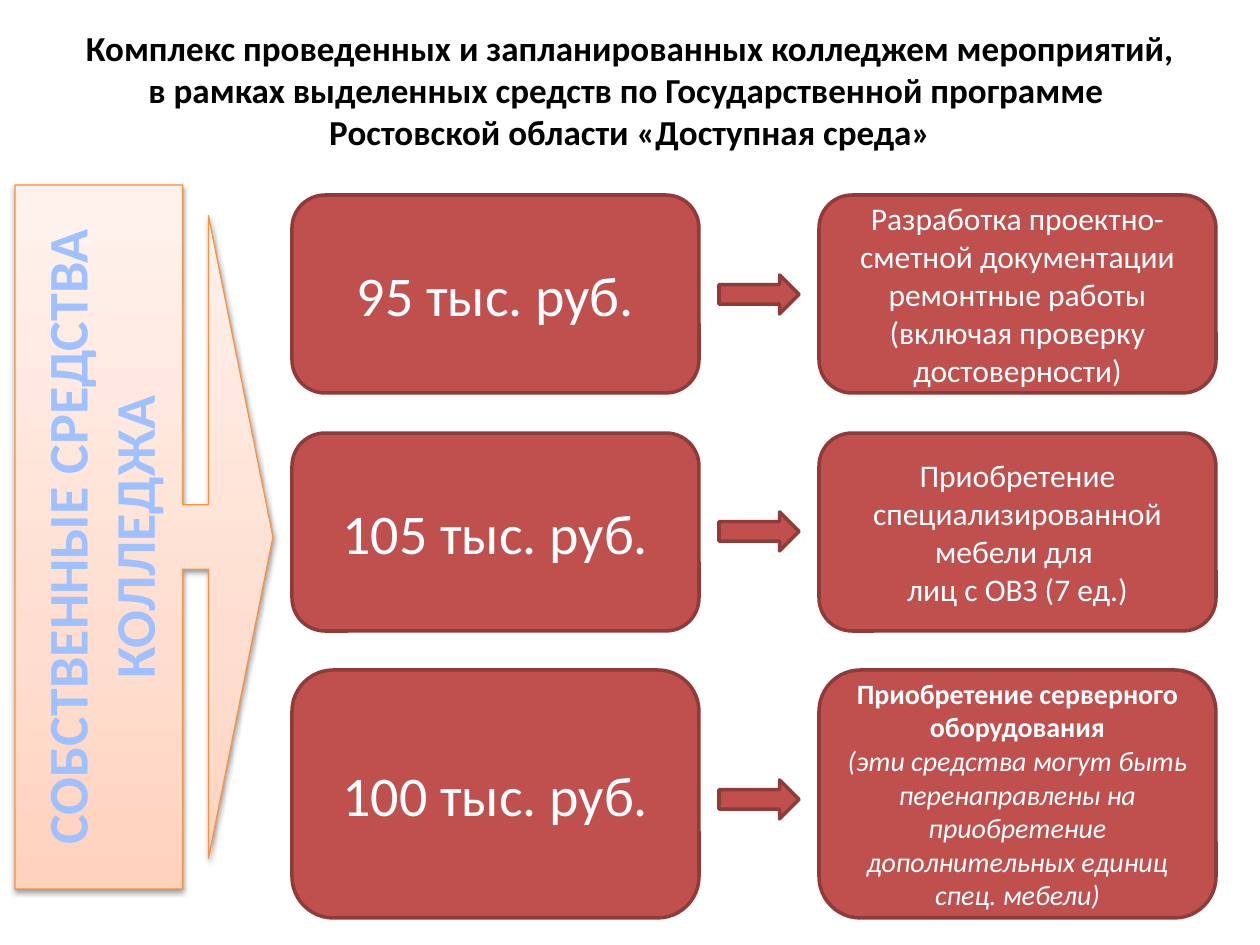
from copy import deepcopy
from pptx import Presentation
from pptx.dml.color import RGBColor as Rgb
from pptx.enum.shapes import MSO_SHAPE as Kind
from pptx.enum.text import MSO_ANCHOR as Anchor, MSO_AUTO_SIZE as Fit, PP_ALIGN as Align
from pptx.oxml import parse_xml
from pptx.oxml.ns import nsdecls, qn
from pptx.util import Pt

PX = 914400 / 126
HUE = {
    "red": "C0504D", "edge": "8E3B39", "white": "FFFFFF", "black": "000000",
    "rim": "F69240", "blue": "A0C1FF",
    "deep": "FFD2BD", "mid": "FFDED0", "pale": "FFF2ED",
}


def put(kind, *box):
    shape = deck.add_shape(kind, *[round(n * PX) for n in box])
    shape.shadow.inherit = False
    shape.fill.solid()
    shape.fill.fore_color.rgb = Rgb.from_string(HUE["red"])
    shape.line.color.rgb = Rgb.from_string(HUE["edge"])
    shape.line.width = Pt(2)
    return shape


def write(shape, text, size, hue, bold=False):
    frame = shape.text_frame
    frame.word_wrap = True
    frame.auto_size = Fit.NONE
    frame.vertical_anchor = Anchor.MIDDLE
    para = frame.paragraphs[0]
    para.text = text
    para.alignment = Align.CENTER
    font = para.font
    font.name = "Calibri"
    font.size = Pt(size)
    font.bold = bold
    font.color.rgb = Rgb.from_string(HUE[hue])
    return para


prs = Presentation()
prs.slide_width = round(1260 * PX)
prs.slide_height = round(945 * PX)
slide = prs.slides.add_slide(prs.slide_layouts[5])
deck = slide.shapes

title = deck.title
title.left, title.top, title.width, title.height = [
    round(n * PX) for n in (0, 27, 1260, 125)]
write(title, "Комплекс проведенных и запланированных колледжем мероприятий,\n"
      "в рамках выделенных средств по Государственной программе \n"
      "Ростовской области «Доступная среда»", 20, "black", True)

fund = put(Kind.RIGHT_ARROW_CALLOUT, 15, 185, 258, 704)
for i, value in enumerate((0.25, 1.246, 0.25, 0.65)):
    fund.adjustments[i] = value
fund.line.color.rgb = Rgb.from_string(HUE["rim"])
fund.line.width = Pt(0.75)
fund.fill.gradient()
fund.fill.gradient_angle = 90
props = fund._element.spPr
stops = props.find(".//" + qn("a:gsLst"))
stops.append(deepcopy(stops[0]))
for stop, (place, hue) in zip(
        fund.fill.gradient_stops, ((0, "deep"), (0.35, "mid"), (1, "pale"))):
    stop.position = place
    stop.color.rgb = Rgb.from_string(HUE[hue])
props.find(qn("a:effectLst")).append(parse_xml(
    f'<a:outerShdw {nsdecls("a")} blurRad="{Pt(3.1)}" dist="{Pt(1.6)}" '
    f'dir="5400000" rotWithShape="0"><a:srgbClr val="{HUE["black"]}">'
    '<a:alpha val="38000"/></a:srgbClr></a:outerShdw>'))
write(fund, "СОБСТВЕННЫЕ СРЕДСТВА КОЛЛЕДЖА", 32, "blue", True)
fund.text_frame._txBody.bodyPr.set("vert", "vert270")

rows = (
    (195, 198, 275, "95 тыс. руб.", 18,
     "Разработка проектно-сметной документации ремонтные работы\n"
     "(включая проверку достоверности)", ""),
    (433, 198, 512, "105 тыс. руб.", 18,
     "Приобретение специализированной мебели для \nлиц с ОВЗ (7 ед.)", ""),
    (670, 248, 780, "100 тыс. руб.", 16, "Приобретение серверного оборудования",
     "(эти средства могут быть перенаправлены на приобретение "
     "дополнительных единиц спец. мебели)"),
)
for top, high, mid, cost, size, goal, note in rows:
    write(put(Kind.ROUNDED_RECTANGLE, 292, top, 407, high), cost, 32, "white")
    para = write(put(Kind.ROUNDED_RECTANGLE, 819, top, 397, high), goal, size, "white")
    if note:
        para.runs[0].font.bold = True
        para.add_line_break()
        run = para.add_run()
        run.text = note
        run.font.italic = True
    put(Kind.RIGHT_ARROW, 719, mid, 80, 39)

prs.save("out.pptx")
